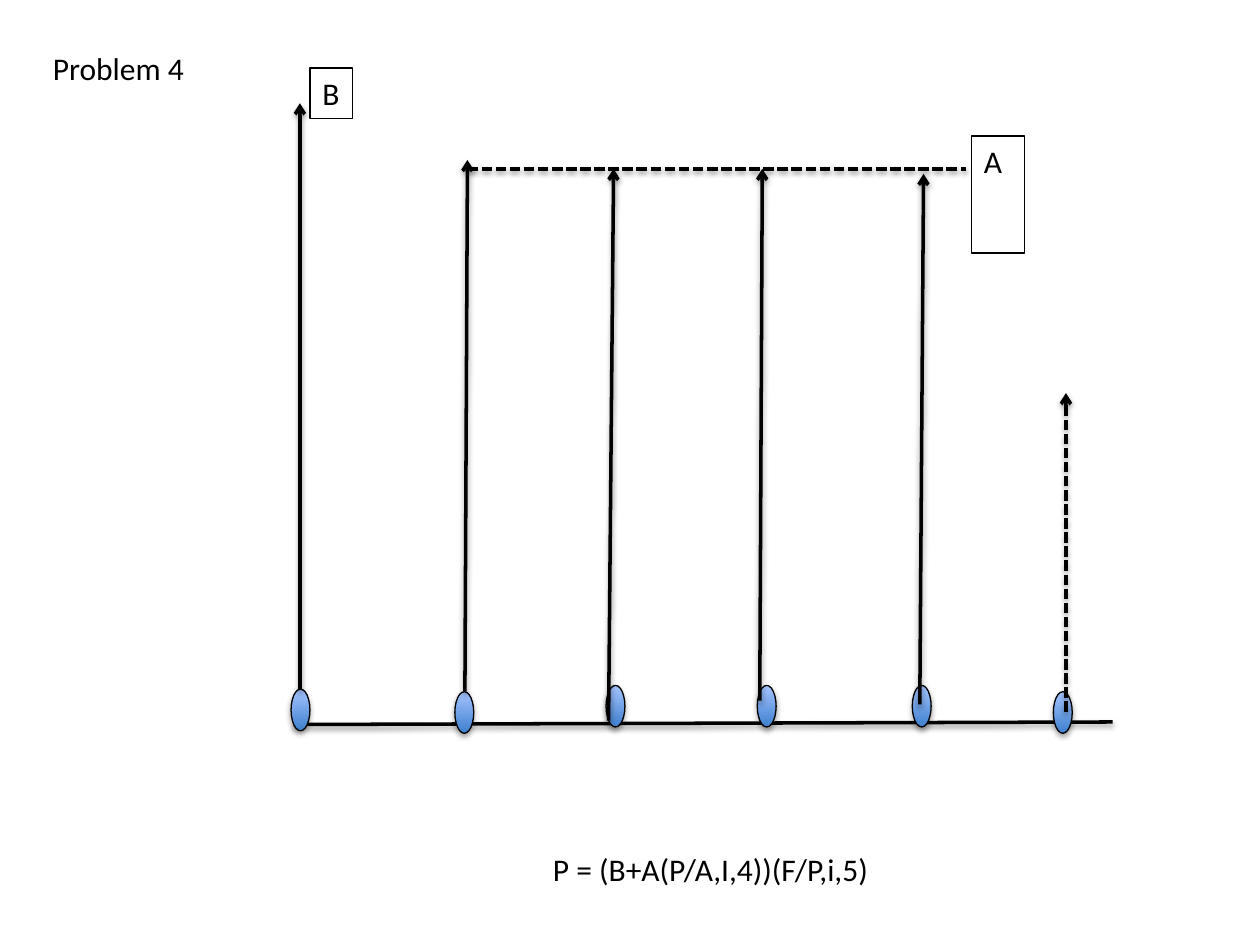
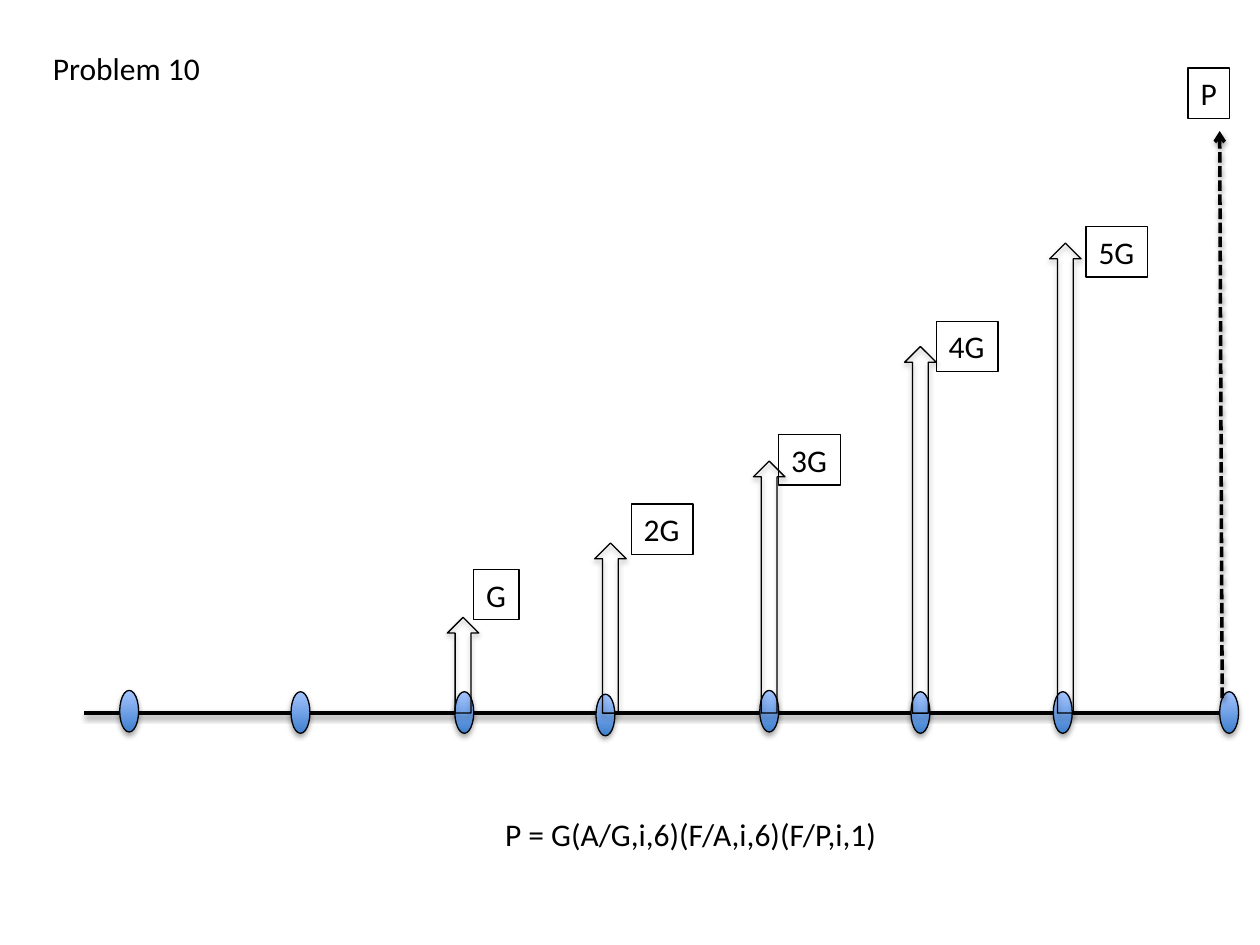
"""Build two cash-flow diagrams with their equivalence formulas."""
from lxml.etree import SubElement
from pptx import Presentation
from pptx.dml.color import RGBColor
from pptx.enum.dml import MSO_LINE
from pptx.enum.shapes import MSO_CONNECTOR, MSO_SHAPE
from pptx.enum.text import MSO_ANCHOR, MSO_AUTO_SIZE, PP_ALIGN
from pptx.oxml.ns import qn
from pptx.util import Inches, Pt

COLOURS = {"ink": "000000", "dot_bottom": "3F80CE", "dot_top": "A4C4FF"}
FONT, TEXT_SIZE = "Calibri", 18
DOT_WIDTH, DOT_HEIGHT = 0.15, 0.33
ARROW_WIDTH, ROW_HEIGHT = 0.25, 0.4
TITLE_LEFT, TITLE_TOP = 0.32, 0.34

DIAGRAMS = [
    {
        "title": ("Problem 4", 1.26),
        "formula": ("P = (B+A(P/A,I,4))(F/P,i,5)", 4.29, 6.7, 2.79),
        "axis": (2.33, 5.75, 8.83, 5.73),
        "dots": [(2.31, 5.47), (3.61, 5.49), (4.81, 5.44),
                 (6.01, 5.44), (7.24, 5.44), (8.36, 5.49)],
        "payments": [(2.38, 5.47, 2.38, 0.82), (3.69, 5.49, 3.71, 1.27),
                     (4.83, 5.72, 4.87, 1.34), (6.03, 5.56, 6.05, 1.34),
                     (7.3, 5.59, 7.33, 1.38)],
        "unknown": (8.46, 5.65, 8.46, 3.12),
        "levels": [(3.71, 1.34, 7.67, 1.34)],
        "block_arrows": [],
        "labels": [("B", 2.46, 0.54, 0.34, ROW_HEIGHT), ("A", 7.71, 1.08, 0.42, 0.93)],
    },
    {
        "title": ("Problem 10", 1.38),
        "formula": ("P = G(A/G,i,6)(F/A,i,6)(F/P,i,1)", 3.91, 6.42, 3.25),
        "axis": (0.67, 5.66, 9.75, 5.66),
        "dots": [(0.95, 5.48), (2.31, 5.49), (3.61, 5.49), (4.73, 5.51),
                 (6.03, 5.48), (7.23, 5.49), (8.36, 5.49), (9.68, 5.49)],
        "payments": [],
        "unknown": (9.7, 5.54, 9.68, 1.04),
        "levels": [],
        "block_arrows": [(3.55, 4.9), (4.72, 4.31), (5.98, 3.66), (7.18, 2.75), (8.33, 1.93)],
        "labels": [("G", 3.76, 4.52, 0.36, ROW_HEIGHT), ("2G", 5.01, 4, 0.49, ROW_HEIGHT),
                   ("3G", 6.18, 3.45, 0.49, ROW_HEIGHT), ("4G", 7.43, 2.55, 0.49, ROW_HEIGHT),
                   ("5G", 8.62, 1.8, 0.49, ROW_HEIGHT), ("P", 9.43, 0.54, 0.33, ROW_HEIGHT)],
    },
]


def colour(name):
    return RGBColor.from_string(COLOURS[name])


def add_shadow(item, distance, opacity):
    effects = SubElement(item._element.spPr, qn("a:effectLst"))
    shadow = SubElement(effects, qn("a:outerShdw"), blurRad=str(Pt(3.1)),
                        dist=str(Pt(distance)), dir="5400000", rotWithShape="0")
    ink = SubElement(shadow, qn("a:srgbClr"), val=COLOURS["ink"])
    SubElement(ink, qn("a:alpha"), val=str(opacity * 1000))


def set_line(item, width):
    item.line.color.rgb = colour("ink")
    item.line.width = Pt(width)


def add_line(page, ends, dashed=False, arrow=False):
    line = page.shapes.add_connector(MSO_CONNECTOR.STRAIGHT, *map(Inches, ends))
    set_line(line, 2)
    if dashed:
        line.line.dash_style = MSO_LINE.SQUARE_DOT
    if arrow:
        SubElement(line.line._get_or_add_ln(), qn("a:tailEnd"), type="arrow")
    add_shadow(line, 1.6, 38)


def add_solid(page, kind, *frame):
    solid = page.shapes.add_shape(kind, *map(Inches, frame))
    set_line(solid, 0.75)
    return solid


def add_dot(page, left, top):
    dot = add_solid(page, MSO_SHAPE.OVAL, left, top, DOT_WIDTH, DOT_HEIGHT)
    dot.fill.gradient()
    dot.fill.gradient_angle = 90
    for stop, name in zip(dot.fill.gradient_stops, ("dot_bottom", "dot_top")):
        stop.color.rgb = colour(name)
    add_shadow(dot, 1.8, 35)


def add_block_arrow(page, left, top, base):
    arrow = add_solid(page, MSO_SHAPE.UP_ARROW, left, top, ARROW_WIDTH, base - top)
    arrow.fill.background()
    add_shadow(arrow, 1.8, 35)


def set_text(box, text, fit=True):
    frame = box.text_frame
    frame.text = text
    frame.word_wrap = not fit
    frame.auto_size = MSO_AUTO_SIZE.SHAPE_TO_FIT_TEXT if fit else MSO_AUTO_SIZE.NONE
    frame.vertical_anchor = MSO_ANCHOR.TOP
    paragraph = frame.paragraphs[0]
    paragraph.alignment = PP_ALIGN.LEFT
    font = paragraph.runs[0].font
    font.name, font.size = FONT, Pt(TEXT_SIZE)
    font.color.rgb = colour("ink")


def add_text(page, text, *frame):
    box = page.shapes.add_textbox(*map(Inches, frame))
    set_text(box, text, fit=frame[-1] == ROW_HEIGHT)
    return box


def draw_diagram(deck, diagram):
    page = deck.slides.add_slide(deck.slide_layouts[5])
    title = page.shapes.title
    text, width = diagram["title"]
    title.left, title.top, title.width, title.height = map(
        Inches, (TITLE_LEFT, TITLE_TOP, width, ROW_HEIGHT))
    set_text(title, text)
    add_line(page, diagram["axis"])
    for dot in diagram["dots"]:
        add_dot(page, *dot)
    for ends in diagram["payments"]:
        add_line(page, ends, arrow=True)
    for left, top in diagram["block_arrows"]:
        add_block_arrow(page, left, top, diagram["axis"][1])
    add_line(page, diagram["unknown"], dashed=True, arrow=True)
    for ends in diagram["levels"]:
        add_line(page, ends, dashed=True)
    for label in diagram["labels"]:
        set_line(add_text(page, *label), 0.75)
    add_text(page, *diagram["formula"], ROW_HEIGHT)


def main():
    deck = Presentation()
    deck.slide_width, deck.slide_height = Inches(10), Inches(7.5)
    for diagram in DIAGRAMS:
        draw_diagram(deck, diagram)
    deck.save("out.pptx")


if __name__ == "__main__":
    main()
